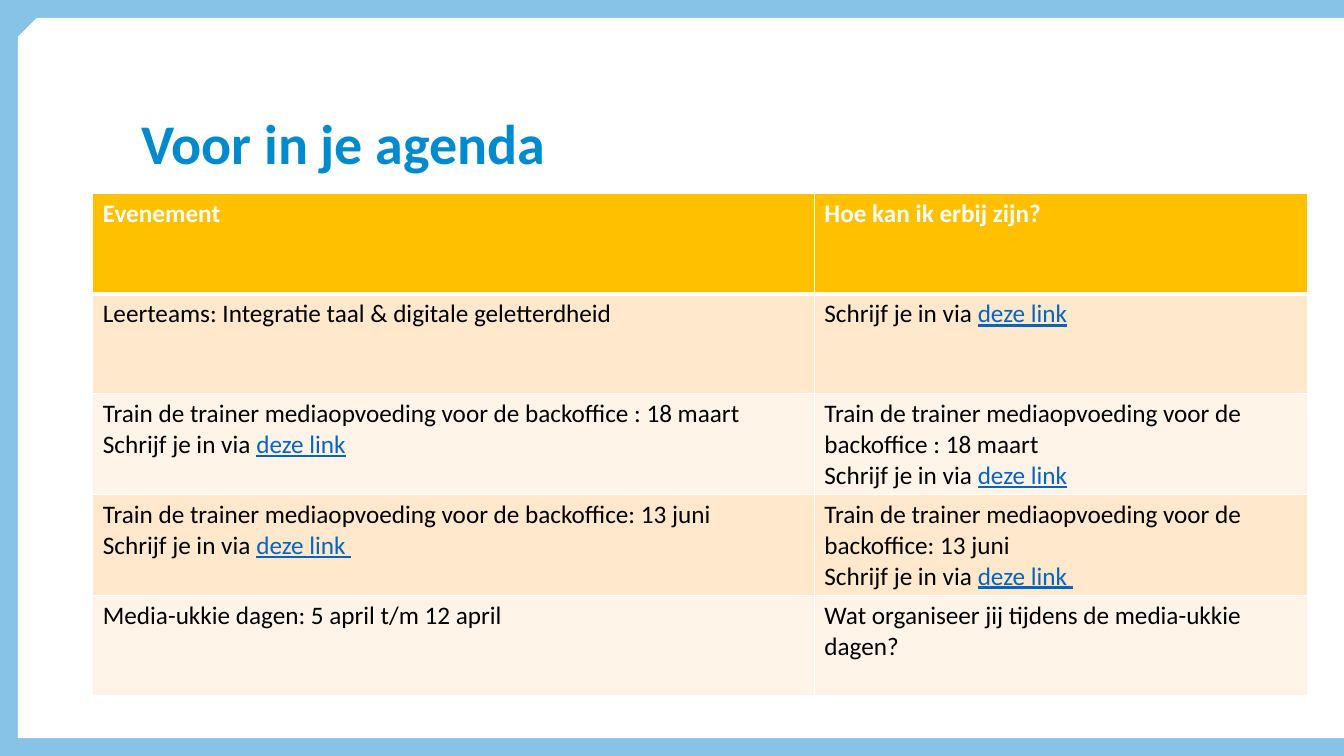
from lxml.etree import SubElement
from pptx import Presentation
from pptx.dml.color import RGBColor
from pptx.enum.text import MSO_ANCHOR
from pptx.oxml.ns import qn
from pptx.util import Cm, Pt

FONT = "Calibri"
WHITE, BLACK = "FFFFFF", "000000"
SKY, BLUE, LINK = "87C3E7", "008ACE", "0563C1"
GOLD, BANDS = "FFC000", ("FFE8CC", "FFF4E7")
SIGN_UP = "Schrijf je in via |deze link"
MARCH = "Train de trainer mediaopvoeding voor de backoffice : 18 maart\n" + SIGN_UP
JUNE = "Train de trainer mediaopvoeding voor de backoffice: 13 juni\n" + SIGN_UP + " "
AGENDA = [
    ("Evenement", "Hoe kan ik erbij zijn?"),
    ("Leerteams: Integratie taal & digitale geletterdheid", SIGN_UP),
    (MARCH, MARCH),
    (JUNE, JUNE),
    ("Media-ukkie dagen: 5 april t/m 12 april",
     "Wat organiseer jij tijdens de media-ukkie dagen?"),
]


def rgb(value):
    return RGBColor.from_string(value)


def style_run(r, size, color, bold=False, underline=False):
    r.font.name = FONT
    r.font.size = Pt(size)
    r.font.bold = bold
    r.font.underline = underline
    r.font.color.rgb = rgb(color)


def add_panel(slide, left, top, width, height, snip):
    right, bottom = left + width, top + height
    outline = slide.shapes.build_freeform(left, top + snip)
    outline.add_line_segments(
        [(left + snip, top), (right, top), (right, bottom), (left, bottom)])
    sp = outline.convert_to_shape()
    sp.shadow.inherit = False
    sp.fill.solid()
    sp.fill.fore_color.rgb = rgb(WHITE)
    sp.line.fill.background()


def add_title(slide, left, top, width, height, text):
    tf = slide.shapes.add_textbox(left, top, width, height).text_frame
    tf.word_wrap = True
    tf.vertical_anchor = MSO_ANCHOR.MIDDLE
    tf.margin_left = tf.margin_right = tf.margin_top = tf.margin_bottom = 0
    p = tf.paragraphs[0]
    p.text = text
    p.line_spacing = 0.8
    style_run(p.runs[0], 40, BLUE, bold=True)


def set_borders(cell, top, bottom):
    tc_pr = cell._tc.get_or_add_tcPr()
    for side, width in (("L", 1), ("R", 1), ("T", top), ("B", bottom)):
        ln = SubElement(tc_pr, qn(f"a:ln{side}"), w=str(Pt(width)))
        fill = SubElement(ln, qn("a:solidFill"))
        SubElement(fill, qn("a:srgbClr"), val=WHITE)


def fill_cell(cell, text, row):
    header = row == 0
    set_borders(cell, 3 if row == 1 else 1, 3 if header else 1)
    cell.fill.solid()
    cell.fill.fore_color.rgb = rgb(GOLD if header else BANDS[(row - 1) % 2])
    tf = cell.text_frame
    tf.text = text.replace("|", "")
    for p, line in zip(tf.paragraphs, text.split("\n")):
        plain, _, link = line.partition("|")
        p.runs[0].text = plain
        style_run(p.runs[0], 18, WHITE if header else BLACK, bold=header)
        if link:
            r = p.add_run()
            r.text = link
            style_run(r, 18, LINK, underline=True)


def add_agenda(slide, left, top, width, height, rows, first_share):
    table = slide.shapes.add_table(
        len(rows), 2, left, top, width, height).table
    table.columns[0].width = int(width * first_share)
    table.columns[1].width = width - table.columns[0].width
    for i, texts in enumerate(rows):
        for cell, text in zip(table.rows[i].cells, texts):
            fill_cell(cell, text, i)


def main():
    prs = Presentation()
    prs.slide_width, prs.slide_height = Cm(33.87), Cm(19.05)
    s = prs.slides.add_slide(prs.slide_layouts[6])
    s.background.fill.solid()
    s.background.fill.fore_color.rgb = rgb(SKY)
    edge = Cm(0.45)
    add_panel(s, edge, edge, prs.slide_width - edge,
              prs.slide_height - 2 * edge, Cm(0.48))
    add_title(s, Cm(3.56), Cm(2.82), Cm(25.9), Cm(1.83), "Voor in je agenda")
    add_agenda(s, Cm(2.34), Cm(4.88), Cm(30.61), Cm(12.6), AGENDA, 0.594)
    prs.save("out.pptx")


if __name__ == "__main__":
    main()
